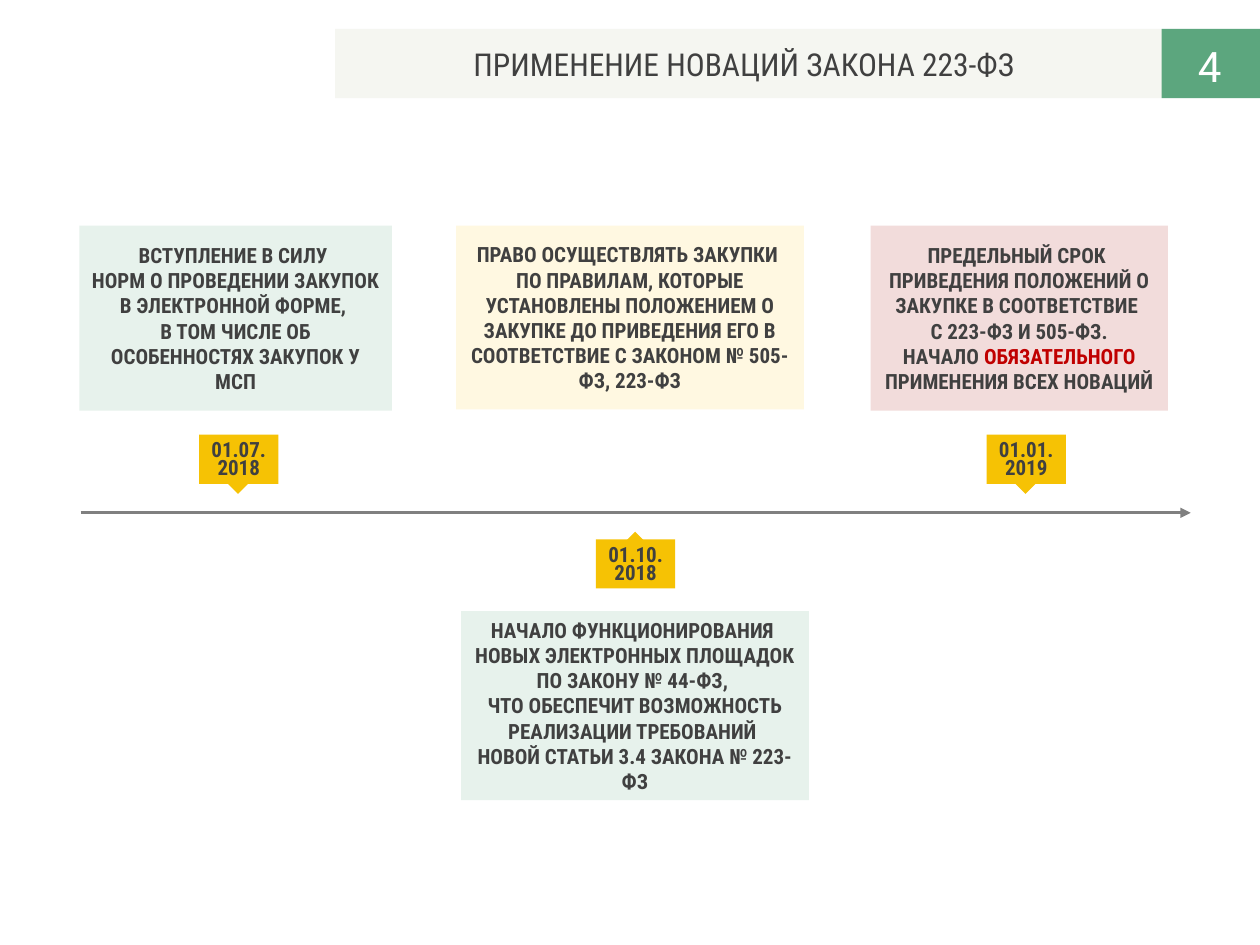
"""Build the timeline slide on applying the changes to law 223-ФЗ."""
from lxml import etree
from pptx import Presentation
from pptx import util as u
from pptx.dml.color import RGBColor
from pptx.enum import shapes, text
from pptx.oxml.ns import qn

DARK = RGBColor(0x40, 0x40, 0x40)
WHITE = RGBColor(0xFF, 0xFF, 0xFF)
GREY = RGBColor(0x80, 0x80, 0x80)
RED = RGBColor(0xC0, 0x00, 0x00)
GREEN = RGBColor(0x07, 0x7A, 0x3E)
GOLD = RGBColor(0xF6, 0xC2, 0x04)
PALE = RGBColor(0xF5, 0xF6, 0xF1)
MINT = RGBColor(0xE7, 0xF2, 0xEC)
CREAM = RGBColor(0xFF, 0xF8, 0xE1)
ROSE = RGBColor(0xF2, 0xDC, 0xDB)

KIND = shapes.MSO_SHAPE
MID, LEFT = text.PP_ALIGN.CENTER, text.PP_ALIGN.LEFT
TOP, HALF = text.MSO_ANCHOR.TOP, text.MSO_ANCHOR.MIDDLE
BOLD = {"name": "Roboto Condensed", "size": u.Pt(12), "bold": True}
HEAD = {"name": "Roboto Condensed", "size": u.Pt(18), "bold": False}
PAGE = {"name": "Roboto", "size": u.Pt(24)}

deck = Presentation()
deck.slide_width, deck.slide_height = u.Inches(10), u.Inches(7.5)
slide = deck.slides.add_slide(deck.slide_layouts[5])


def block(kind, at, fill):
    shape = slide.shapes.add_shape(kind, *map(u.Inches, at))
    shape.shadow.inherit = False
    shape.fill.solid()
    shape.fill.fore_color.rgb = fill
    shape.line.fill.background()
    return shape


def write(frame, lines, font, color=DARK, align=MID, anchor=TOP, lead=None):
    form = {"word_wrap": True, "vertical_anchor": anchor,
            "auto_size": text.MSO_AUTO_SIZE.NONE}
    for key, value in form.items():
        setattr(frame, key, value)
    for i, line in enumerate(lines):
        para = frame.add_paragraph() if i else frame.paragraphs[0]
        para.alignment, para.line_spacing = align, lead
        for j, part in enumerate(line.split("|")):
            run = para.add_run()
            run.text = part
            for key, value in font.items():
                setattr(run.font, key, value)
            run.font.color.rgb = RED if j == 1 else color


bar = block(KIND.RECTANGLE, (2.66, 0.23, 7.34, 0.55), PALE)
title = slide.shapes.title
spot = {"left": 2.67, "top": 0.31, "width": 6.47, "height": 0.4}
for key, value in spot.items():
    setattr(title, key, u.Inches(value))
write(title.text_frame, ["ПРИМЕНЕНИЕ НОВАЦИЙ ЗАКОНА 223-ФЗ"], HEAD)
bar._element.addnext(title._element)

badge = block(KIND.RECTANGLE, (9.22, 0.23, 0.78, 0.55), GREEN)
tint = badge._element.spPr.find(qn("a:solidFill"))[0]
etree.SubElement(tint, qn("a:alpha"), val="64000")
page = slide.shapes.add_textbox(*map(u.Inches, (9.41, 0.27, 0.63, 0.5)))
write(page.text_frame, ["4"], PAGE, WHITE, LEFT)

axis = slide.shapes.add_connector(
    shapes.MSO_CONNECTOR.STRAIGHT, *map(u.Inches, (0.64, 4.07, 9.45, 4.07)))
axis.line.color.rgb = GREY
axis.line.width = u.Pt(1.5)
etree.SubElement(axis.line._get_or_add_ln(), qn("a:tailEnd"), type="triangle")
etree.SubElement(axis._element.spPr, qn("a:effectLst"))

dates = [
    (1.58, 3.45, 3.84, 0, ["01.07.", "2018"]),
    (4.73, 4.28, 4.22, 180, ["01.10.", "2018"]),
    (7.83, 3.45, 3.84, 0, ["01.01.", "2019"]),
]
for left, top, tip, turn, lines in dates:
    mark = block(KIND.FLOWCHART_MERGE, (left + 0.23, tip, 0.16, 0.08), GOLD)
    mark.rotation = turn
    block(KIND.RECTANGLE, (left, top, 0.63, 0.39), GOLD)
    spot = (left - 0.04, top + 0.03, 0.71, 0.39)
    label = slide.shapes.add_textbox(*map(u.Inches, spot))
    write(label.text_frame, lines, BOLD, lead=u.Pt(10))

cards = [
    ((0.63, 1.79, 2.48, 1.47), MINT, [
        "ВСТУПЛЕНИЕ В СИЛУ ",
        "НОРМ О ПРОВЕДЕНИИ ЗАКУПОК ",
        "В ЭЛЕКТРОННОЙ ФОРМЕ, ",
        "В ТОМ ЧИСЛЕ ОБ ОСОБЕННОСТЯХ ЗАКУПОК У МСП"]),
    ((3.62, 1.79, 2.76, 1.46), CREAM, [
        "ПРАВО ОСУЩЕСТВЛЯТЬ ЗАКУПКИ ",
        "ПО ПРАВИЛАМ, КОТОРЫЕ УСТАНОВЛЕНЫ ПОЛОЖЕНИЕМ О ЗАКУПКЕ "
        "ДО ПРИВЕДЕНИЯ ЕГО В СООТВЕТСТВИЕ С ЗАКОНОМ № 505-ФЗ, 223-ФЗ"]),
    ((6.91, 1.79, 2.36, 1.47), ROSE, [
        "ПРЕДЕЛЬНЫЙ СРОК ",
        "ПРИВЕДЕНИЯ ПОЛОЖЕНИЙ О ЗАКУПКЕ В СООТВЕТСТВИЕ ",
        "С 223-ФЗ И 505-ФЗ.",
        "НАЧАЛО |ОБЯЗАТЕЛЬНОГО |ПРИМЕНЕНИЯ ВСЕХ НОВАЦИЙ"]),
    ((3.66, 4.85, 2.76, 1.5), MINT, [
        "НАЧАЛО ФУНКЦИОНИРОВАНИЯ ",
        "НОВЫХ ЭЛЕКТРОННЫХ ПЛОЩАДОК ",
        "ПО ЗАКОНУ № 44-ФЗ, ",
        "ЧТО ОБЕСПЕЧИТ ВОЗМОЖНОСТЬ РЕАЛИЗАЦИИ ТРЕБОВАНИЙ ",
        "НОВОЙ СТАТЬИ 3.4 ЗАКОНА № 223-ФЗ"]),
]
for at, fill, lines in cards:
    card = block(KIND.RECTANGLE, at, fill)
    write(card.text_frame, lines, BOLD, anchor=HALF)

deck.save("out.pptx")
